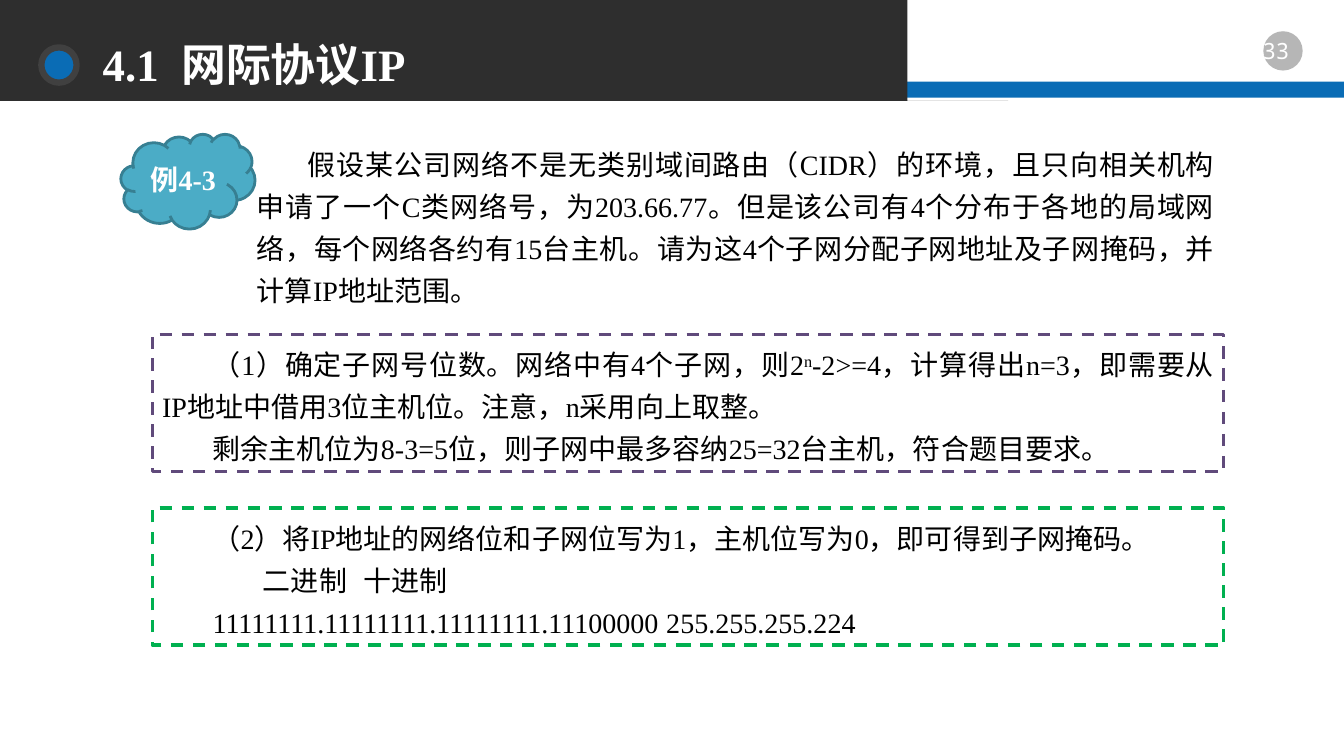
from pptx import Presentation
from pptx.dml.color import RGBColor
from pptx.enum.dml import MSO_LINE
from pptx.enum.shapes import MSO_SHAPE
from pptx.enum.text import MSO_ANCHOR, PP_ALIGN
from pptx.oxml.ns import qn
from pptx.util import Inches, Pt
from lxml import etree

RECT, OVAL, CLOUD = MSO_SHAPE.RECTANGLE, MSO_SHAPE.OVAL, MSO_SHAPE.CLOUD
CENTER, JUSTIFY, LEFT = PP_ALIGN.CENTER, PP_ALIGN.JUSTIFY, PP_ALIGN.LEFT
TOP, MIDDLE = MSO_ANCHOR.TOP, MSO_ANCHOR.MIDDLE
DASH = MSO_LINE.DASH

COLORS = {
    "blue": "0A6CB5", "dark": "2E2E2E", "ring": "404040", "white": "FFFFFF",
    "black": "000000", "cloud": "4BACC6", "cloud_edge": "377F92",
    "purple": "604A7B", "green": "00B050",
}
TITLE = {"size": Pt(32), "bold": True, "name": "Times New Roman", "color": "white"}
BADGE = {**TITLE, "size": Pt(20)}
BODY = {"size": Pt(20), "name": "Times New Roman", "color": "black"}
NUMBER = {"size": Pt(16), "name": "Noto Sans Mono", "color": "white"}
BODY_PARA = {"alignment": JUSTIFY, "line_spacing": 1.25}


def rgb(name):
    return RGBColor.from_string(COLORS[name])


def bezier(p0, p1, p2, p3, steps=12):
    """Points on a cubic curve, without its start."""
    ts = [i / steps for i in range(1, steps + 1)]
    return [tuple((1 - t) ** 3 * a + 3 * (1 - t) ** 2 * t * b
                  + 3 * (1 - t) * t ** 2 * c + t ** 3 * d
                  for a, b, c, d in zip(p0, p1, p2, p3)) for t in ts]


class SlideBuilder:
    def __init__(self, prs):
        self.slide = prs.slides.add_slide(prs.slide_layouts[6])
        self.shapes = self.slide.shapes

    def paint(self, sp, fill=None, line=None, width=1, dash=None, alpha=None):
        sp.shadow.inherit = False
        if fill:
            sp.fill.solid()
            sp.fill.fore_color.rgb = rgb(fill)
        else:
            sp.fill.background()
        if alpha:
            clr = sp._element.spPr.find(qn("a:solidFill")).find(qn("a:srgbClr"))
            etree.SubElement(clr, qn("a:alpha"), val=str(alpha * 1000))
        if line:
            sp.line.color.rgb = rgb(line)
            sp.line.width = Pt(width)
            sp.line.dash_style = dash
        else:
            sp.line.fill.background()
        return sp

    def shape(self, kind, box, **paint):
        return self.paint(self.shapes.add_shape(kind, *map(Inches, box)), **paint)

    def freeform(self, points, **paint):
        fb = self.shapes.build_freeform(*points[0], scale=Inches(1))
        fb.add_line_segments(points[1:], close=True)
        return self.paint(fb.convert_to_shape(), **paint)

    def text_box(self, box):
        return self.shapes.add_textbox(*map(Inches, box))

    def set_text(self, sp, paragraphs, font, para, anchor=TOP, indent=0, tabs=()):
        """Each paragraph is a list of (text, baseline percent) runs."""
        tf = sp.text_frame
        tf.word_wrap = True
        tf.vertical_anchor = anchor
        for i, runs in enumerate(paragraphs):
            p = tf.paragraphs[0] if i == 0 else tf.add_paragraph()
            pPr = p._p.get_or_add_pPr()
            pPr.set("marL", "0")
            pPr.set("indent", str(Inches(indent)))
            if i < len(tabs) and tabs[i]:
                tab_list = etree.SubElement(pPr, qn("a:tabLst"))
                for pos in tabs[i]:
                    etree.SubElement(tab_list, qn("a:tab"), pos=str(Inches(pos)), algn="l")
            for key, value in para.items():
                setattr(p, key, value)
            for text, baseline in runs:
                r = p.add_run()
                r.text = text
                for key, value in font.items():
                    if key == "color":
                        r.font.color.rgb = rgb(value)
                    else:
                        setattr(r.font, key, value)
                if baseline:
                    r._r.get_or_add_rPr().set("baseline", str(baseline * 1000))

    def header(self, title, number):
        self.shape(RECT, (0, 0.81, 13.33, 0.16), fill="blue")
        shoulder, corner = (9.37, 0.38), (9.76, 0.97)
        banner = [shoulder, *bezier(shoulder, (9.32, 0.31), (9.33, 0.29), (8.9, 0.29)),
                  (0, 0.31), (0, 0.97), corner,
                  *bezier(corner, (9.47, 0.53), (9.61, 0.7), shoulder)]
        self.freeform(banner, fill="dark")
        self.shape(OVAL, (0.41, 0.47, 0.35, 0.35), fill="blue", line="ring", width=4.5)
        self.shape(OVAL, (12.53, 0.31, 0.39, 0.39), fill="dark", alpha=35)
        self.set_text(self.text_box((12.3, 0.32, 0.71, 0.37)), [[(number, 0)]],
                      NUMBER, {"alignment": CENTER})
        self.set_text(self.text_box((0.92, 0.29, 6.38, 0.75)), [[(title, 0)]],
                      TITLE, {"alignment": LEFT, "line_spacing": 0.9}, MIDDLE)

    def example(self, label, question):
        cloud = self.shape(CLOUD, (1.2, 1.33, 1.33, 0.94), fill="cloud",
                           line="cloud_edge", width=2)
        self.set_text(cloud, [[(label, 0)]], BADGE, {"alignment": CENTER}, MIDDLE)
        box = self.text_box((2.45, 1.33, 9.69, 1.78))
        self.set_text(box, [[(question, 0)]], BODY, BODY_PARA, indent=0.5)
        self.shapes.add_group_shape([cloud, box])

    def step(self, top, color, paragraphs, tabs=()):
        sp = self.shape(RECT, (1.51, top, 10.63, 1.36), line=color, width=2.25, dash=DASH)
        self.set_text(sp, paragraphs, BODY, BODY_PARA, indent=0.5, tabs=tabs)


def main():
    prs = Presentation()
    prs.slide_width, prs.slide_height = Inches(13.33), Inches(7.5)
    s = SlideBuilder(prs)
    s.header("4.1  网际协议IP", "33")
    s.example("例4-3", "假设某公司网络不是无类别域间路由（CIDR）的环境，且只向相关机构"
              "申请了一个C类网络号，为203.66.77。但是该公司有4个分布于各地的局域网络，"
              "每个网络各约有15台主机。请为这4个子网分配子网地址及子网掩码，并计算IP地址范围。")
    s.step(3.32, "purple", [
        [("（1）确定子网号位数。网络中有4个子网，则2", 0), ("n", 30),
         ("-2>=4，计算得出n=3，即需要从IP地址中借用3位主机位。注意，n采用向上取整。", 0)],
        [("剩余主机位为8-3=5位，则子网中最多容纳25=32台主机，符合题目要求。", 0)],
    ])
    s.step(5.04, "green", [
        [("（2）将IP地址的网络位和子网位写为1，主机位写为0，即可得到子网掩码。", 0)],
        [("\t二进制\t十进制", 0)],
        [("11111111.11111111.11111111.11100000\t255.255.255.224", 0)],
    ], tabs=[(), (2.24, 5.75), (6,)])
    prs.save("out.pptx")


if __name__ == "__main__":
    main()
